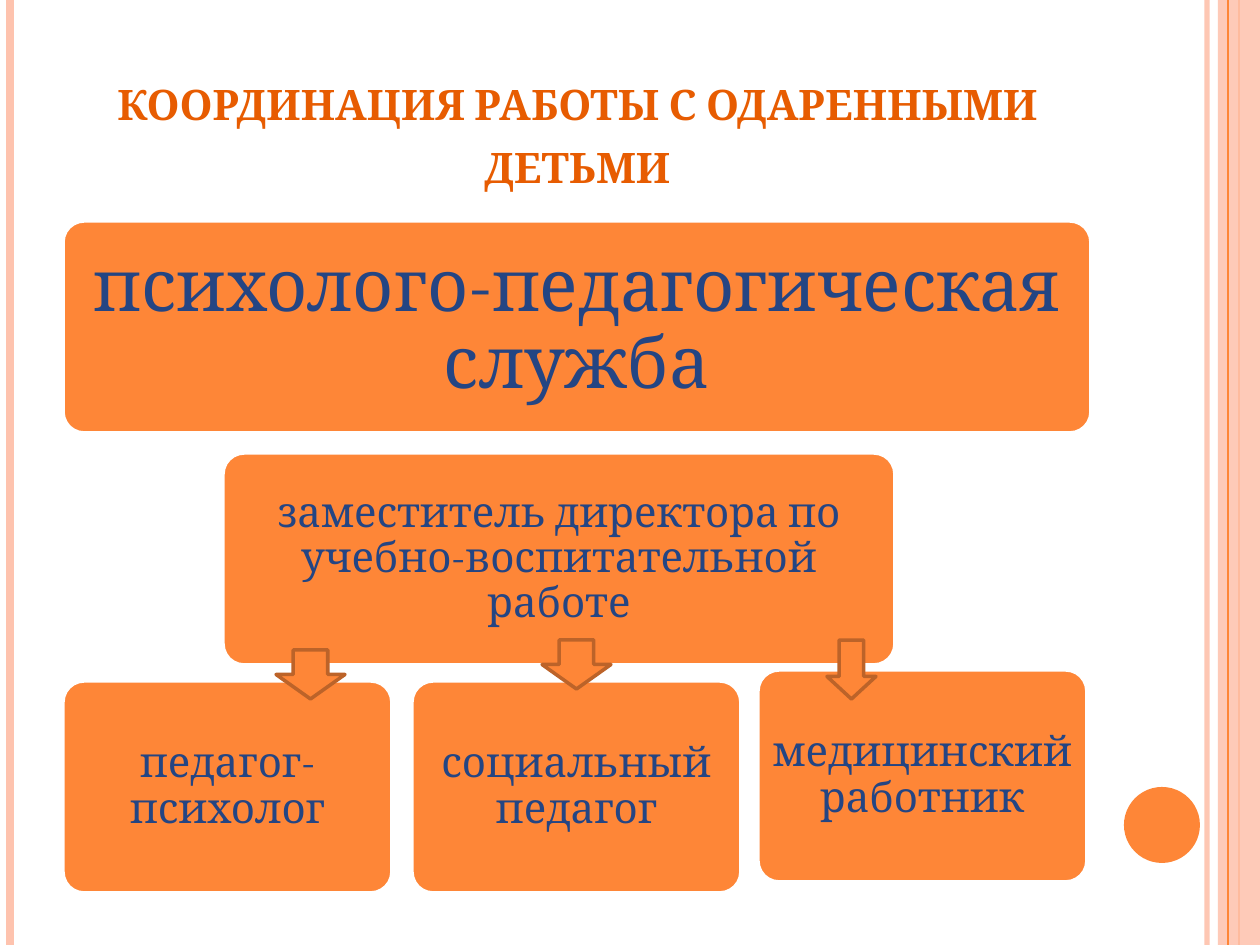
from lxml import etree
from pptx import Presentation
from pptx import util as u
from pptx.dml.color import RGBColor
from pptx.enum import shapes, text
from pptx.oxml.ns import qn

PX = u.Inches(1) / 126
FONT = "Cambria"
COLORS = {
    "box": "FE8637",
    "box_edge": "FFFFFF",
    "box_text": "244583",
    "arrow_edge": "BC6329",
    "title": "E75C01",
    "band": "FEC3AE",
}


def px(length):
    return u.Emu(round(length * PX))


def color(name):
    return RGBColor.from_string(COLORS[name])


def set_opacity(shape, percent):
    """Make every colour set so far on the shape partly transparent."""
    for rgb in shape._element.iter(qn("a:srgbClr")):
        etree.SubElement(rgb, qn("a:alpha"), val=str(percent * 1000))


def add_preset(slide, preset, box, fill, edge=None):
    shape = slide.shapes.add_shape(preset, *map(px, box))
    shape.shadow.inherit = False
    shape.fill.solid()
    shape.fill.fore_color.rgb = color(fill)
    if edge:
        shape.line.color.rgb = color(edge)
        shape.line.width = u.Pt(2)
    else:
        shape.line.fill.background()
    return shape


def add_stripe(slide, x, height, stroke, width):
    stripe = slide.shapes.add_connector(
        shapes.MSO_CONNECTOR.STRAIGHT, px(x), 0, px(x), px(height))
    stripe.line.color.rgb = color(stroke)
    stripe.line.width = u.Pt(width)
    etree.SubElement(stripe._element.spPr, qn("a:effectLst"))
    return stripe


def add_side_decoration(slide, box):
    left, top, width, height = box
    set_opacity(add_stripe(slide, left + 1207, height, "band", 3), 93)
    add_stripe(slide, left + 10, height, "band", 4.5)
    add_stripe(slide, left + 1239, height, "box", 1.5)
    band = add_preset(slide, shapes.MSO_SHAPE.RECTANGLE,
                      (left + 1218, top, width - 1218, height), "band")
    set_opacity(band, 87)
    add_stripe(slide, left + 1228, height, "box", 0.75)
    add_preset(slide, shapes.MSO_SHAPE.OVAL,
               (left + 1124, top + 787, 76, 76), "box")


def set_margins(frame, side, bottom):
    frame.margin_left = frame.margin_right = frame.margin_top = px(side)
    frame.margin_bottom = px(bottom)


def add_title(slide, box, wording):
    frame = slide.shapes.add_textbox(*map(px, box)).text_frame
    frame.word_wrap = True
    frame.vertical_anchor = text.MSO_ANCHOR.BOTTOM
    set_margins(frame, 12, 1)
    heading = frame.paragraphs[0]
    heading.alignment = text.PP_ALIGN.CENTER
    heading.line_spacing = u.Pt(36)
    run = heading.add_run()
    run.text = wording
    run.font.name, run.font.size, run.font.bold = FONT, u.Pt(30), True
    run.font.color.rgb = color("title")
    run._r.get_or_add_rPr().set("cap", "small")


def add_role(slide, box, wording, size=24, margin=7):
    role = add_preset(slide, shapes.MSO_SHAPE.ROUNDED_RECTANGLE, box,
                      "box", "box_edge")
    role.adjustments[0] = 0.1
    frame = role.text_frame
    frame.word_wrap = True
    frame.vertical_anchor = text.MSO_ANCHOR.MIDDLE
    set_margins(frame, margin, margin)
    label = frame.paragraphs[0]
    label.text = wording
    label.alignment = text.PP_ALIGN.CENTER
    label.line_spacing = 0.9
    label.font.name, label.font.size = FONT, u.Pt(size)
    label.font.color.rgb = color("box_text")


def add_hierarchy(slide, box):
    left, top, width, _ = box
    role_height = 212
    add_role(slide, (left, top, width, role_height),
             "психолого-педагогическая служба", size=41, margin=15)
    add_role(slide, (left + 160, top + 232, 672, role_height),
             "заместитель директора по учебно-воспитательной работе")
    specialists = [
        (0, 460, "педагог-психолог"),
        (349, 460, "социальный педагог"),
        (695, 449, "медицинский работник"),
    ]
    for x, y, wording in specialists:
        add_role(slide, (left + x, top + y, 329, role_height), wording)

    arrows = [(213, 429, 69, 49, 0.5), (479, 419, 69, 49, 0.5),
              (764, 419, 49, 59, 0.46)]
    for x, y, w, h, head in arrows:
        arrow = add_preset(slide, shapes.MSO_SHAPE.DOWN_ARROW,
                           (left + x, top + y, w, h), "box", "arrow_edge")
        arrow.adjustments[1] = head


def main():
    deck = Presentation()
    deck.slide_width, deck.slide_height = px(1260), px(945)
    slide = deck.slides.add_slide(deck.slide_layouts[6])
    add_side_decoration(slide, (0, 0, 1260, 945))
    add_title(slide, (63, 38, 1029, 157),
              "координация работы с одаренными детьми")
    add_hierarchy(slide, (63, 221, 1028, 672))
    deck.save("out.pptx")


if __name__ == "__main__":
    main()
